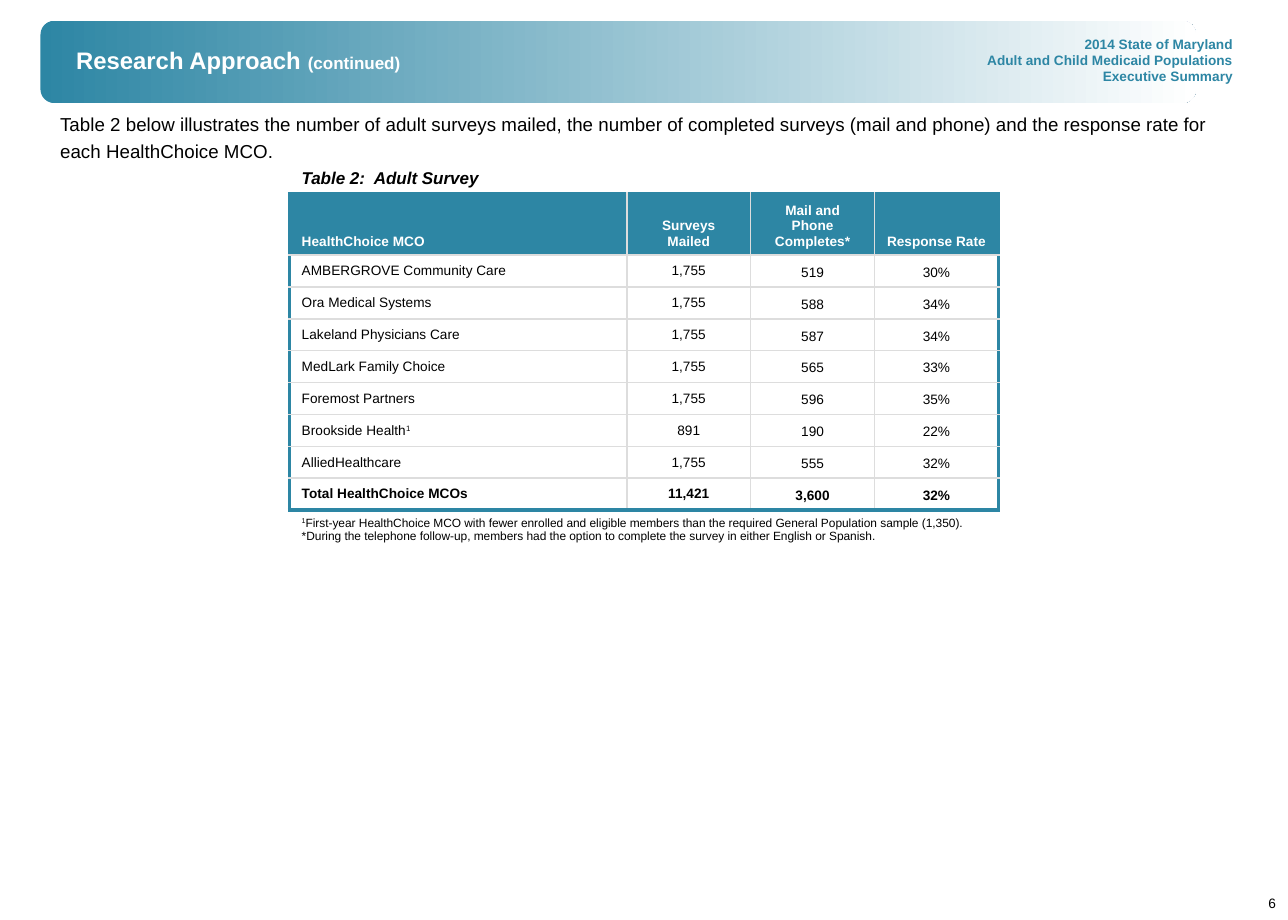
from lxml import etree
from pptx import Presentation
from pptx.dml.color import RGBColor
from pptx.enum.shapes import MSO_SHAPE
from pptx.enum.text import MSO_ANCHOR, MSO_AUTO_SIZE, PP_ALIGN
from pptx.oxml.ns import qn
from pptx.util import Inches, Pt

LEFT, CENTER, RIGHT = PP_ALIGN.LEFT, PP_ALIGN.CENTER, PP_ALIGN.RIGHT
TOP, MIDDLE, BOTTOM = MSO_ANCHOR.TOP, MSO_ANCHOR.MIDDLE, MSO_ANCHOR.BOTTOM
ROUNDED = MSO_SHAPE.ROUNDED_RECTANGLE
NO_AUTOSIZE = MSO_AUTO_SIZE.NONE

COLORS = {"teal": "2D86A4", "grid": "DDDDDD", "text": "000000", "white": "FFFFFF"}
FONT = "Arial"
GRID_COLUMNS, GRID_ROWS = 105, 75
OUTER, INNER = ("teal", 2.25), ("grid", 1)

HEADINGS = ["HealthChoice MCO", "Surveys Mailed", "Mail and Phone Completes*", "Response Rate"]
SURVEYS = [
    ["AMBERGROVE Community Care", "1,755", "519", "30%"],
    ["Ora Medical Systems", "1,755", "588", "34%"],
    ["Lakeland Physicians Care", "1,755", "587", "34%"],
    ["MedLark Family Choice", "1,755", "565", "33%"],
    ["Foremost Partners", "1,755", "596", "35%"],
    ["Brookside Health^1^", "891", "190", "22%"],
    ["AlliedHealthcare", "1,755", "555", "32%"],
    ["Total HealthChoice MCOs", "11,421", "3,600", "32%"],
]
FOOTNOTES = [
    "^1^First-year HealthChoice MCO with fewer enrolled and eligible members than "
    "the required General Population sample (1,350).",
    "*During the telephone follow-up, members had the option to complete the survey "
    "in either English or Spanish.",
]


def rgb(name):
    return RGBColor.from_string(COLORS[name])


class SurveySlide:
    """Places elements on a grid of GRID_COLUMNS by GRID_ROWS."""

    def __init__(self, presentation):
        self.column = presentation.slide_width / GRID_COLUMNS
        self.row = presentation.slide_height / GRID_ROWS
        self.slide = presentation.slides.add_slide(presentation.slide_layouts[1])
        self.shapes = self.slide.shapes

    def box(self, left, top, width, height):
        return (round(left * self.column), round(top * self.row),
                round(width * self.column), round(height * self.row))

    def fill_text(self, frame, lines, size, color="text", bold=False, italic=False,
                  align=LEFT, spacing=None):
        """Fill a text frame; text between ^ marks is raised."""
        for index, line in enumerate(lines):
            paragraph = frame.add_paragraph() if index else frame.paragraphs[0]
            paragraph.alignment = align
            if spacing:
                paragraph.line_spacing = spacing
            for part, text in enumerate(line.split("^")):
                if text:
                    run = paragraph.add_run()
                    run.text = text
                    if part % 2:
                        run._r.get_or_add_rPr().set("baseline", "30000")
            font = paragraph.font
            font.name, font.size = FONT, Pt(size)
            font.bold, font.italic = bold, italic
            font.color.rgb = rgb(color)

    def text(self, area, lines, size, wrap=True, **style):
        frame = self.shapes.add_textbox(*self.box(*area)).text_frame
        frame.word_wrap = wrap
        self.fill_text(frame, lines, size, **style)

    def placeholder(self, shape, area, lines, size, anchor, **style):
        shape.left, shape.top, shape.width, shape.height = self.box(*area)
        frame = shape.text_frame
        frame.auto_size, frame.vertical_anchor = NO_AUTOSIZE, anchor
        properties = frame.paragraphs[0]._p.get_or_add_pPr()
        properties.set("marL", "0")
        properties.set("indent", "0")
        etree.SubElement(properties, qn("a:buNone"))
        self.fill_text(frame, lines, size, **style)
        return frame.paragraphs[0]

    def band(self, area):
        """Add the gradient title band behind the title."""
        band = self.shapes.add_shape(ROUNDED, *self.box(*area))
        band.shadow.inherit = False
        band.line.fill.background()
        band.fill.gradient()
        band.fill.gradient_angle = 0
        for stop, name in zip(band.fill.gradient_stops, ("teal", "white")):
            stop.color.rgb = rgb(name)
        self.shapes.title.element.addprevious(band.element)

    def borders(self, cell, **sides):
        properties = cell._tc.get_or_add_tcPr()
        for side in "LRTB":
            line = etree.SubElement(properties, qn(f"a:ln{side}"))
            if sides[side]:
                name, width = sides[side]
                line.set("w", str(Pt(width)))
                fill = etree.SubElement(line, qn("a:solidFill"))
                etree.SubElement(fill, qn("a:srgbClr")).set("val", COLORS[name])
            else:
                etree.SubElement(line, qn("a:noFill"))

    def cell(self, cell, lines, size, anchor, fill=None, **style):
        cell.vertical_anchor = anchor
        cell.margin_left = cell.margin_right = Inches(0.1)
        if fill:
            cell.fill.solid()
            cell.fill.fore_color.rgb = rgb(fill)
        else:
            cell.fill.background()
        self.fill_text(cell.text_frame, lines, size, **style)

    def survey_table(self, left, top, widths, heights):
        area = self.box(left, top, sum(widths), sum(heights))
        table = self.shapes.add_table(len(heights), len(widths), *area).table
        table.horz_banding = False
        for column, width in zip(table.columns, widths):
            column.width = round(width * self.column)
        for row, height in zip(table.rows, heights):
            row.height = round(height * self.row)

        last_row, last_column = len(SURVEYS), len(HEADINGS) - 1
        for y, values in enumerate([HEADINGS] + SURVEYS):
            for x, value in enumerate(values):
                cell = table.cell(y, x)
                self.borders(cell, L=INNER if x else OUTER, T=INNER if y else OUTER,
                             R=OUTER if x == last_column else INNER,
                             B=OUTER if y == last_row else INNER)
                align = CENTER if x else LEFT
                if y == 0:
                    self.cell(cell, [value], 8, BOTTOM, fill="teal", color="white",
                              bold=True, align=align)
                else:
                    self.cell(cell, [value], 8, MIDDLE, bold=y == last_row, align=align,
                              spacing=1.2 if x > 1 else None)

        for x in range(len(widths)):
            self.borders(table.cell(last_row + 1, x), L=None, R=None, T=OUTER, B=None)
        notes = table.cell(last_row + 1, 0)
        notes.merge(table.cell(last_row + 1, last_column))
        self.cell(notes, FOOTNOTES, 7, TOP)


def main():
    presentation = Presentation()
    presentation.slide_width, presentation.slide_height = Inches(10.5), Inches(7.5)
    page = SurveySlide(presentation)

    page.band((3.3, 1.7, 94.2, 6.7))
    title = page.placeholder(page.shapes.title, (5.2, 3, 94.5, 3.7), ["Research Approach "],
                             14, MIDDLE, color="white", bold=True)
    continued = title.add_run()
    continued.text = "(continued)"
    continued.font.size = Pt(10)
    page.placeholder(
        page.slide.placeholders[1], (3.9, 8.3, 97.1, 27.5),
        ["Table 2 below illustrates the number of adult surveys mailed, the number of completed "
         "surveys (mail and phone) and the response rate for each HealthChoice MCO."],
        11, TOP, spacing=1.2)

    page.text((79.3, 2.4, 22.2, 5),
              ["2014 State of Maryland", "Adult and Child Medicaid Populations",
               "Executive Summary"],
              8, wrap=False, color="teal", bold=True, align=RIGHT)
    page.survey_table(23.6, 15.8, [27.5] + [10.1] * 3, [4.8] + [2.5] * len(SURVEYS) + [4.7])
    page.text((23.6, 13.2, 16.5, 2.7), ["Table 2:  Adult Survey"], 10, wrap=False,
              bold=True, italic=True)
    page.text((99.8, 72.5, 5.2, 2.3), ["6"], 8, align=RIGHT)

    presentation.save("out.pptx")


if __name__ == "__main__":
    main()
